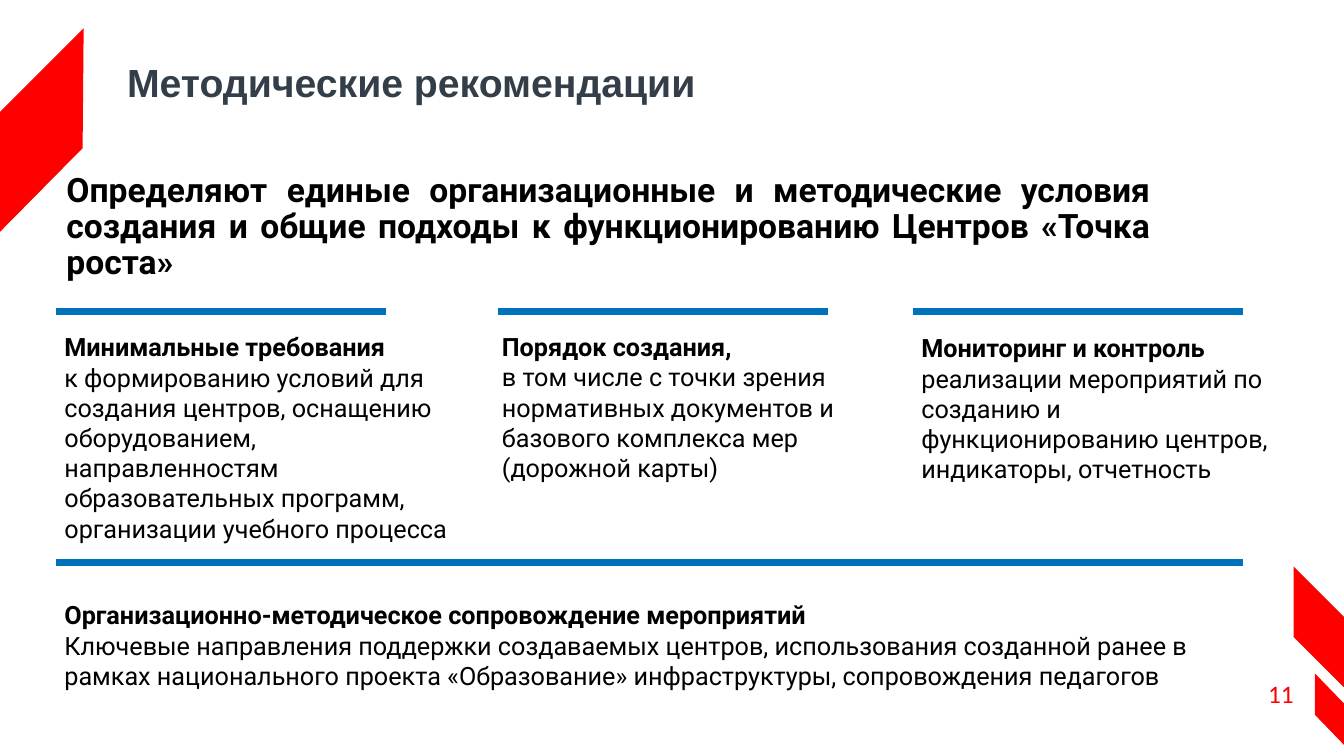
from dataclasses import dataclass

from lxml.etree import SubElement
from pptx import Presentation
from pptx.dml.color import RGBColor
from pptx.enum.shapes import MSO_CONNECTOR
from pptx.enum.text import MSO_ANCHOR, MSO_AUTO_SIZE, PP_ALIGN
from pptx.oxml.ns import qn
from pptx.slide import Slide
from pptx.text.text import TextFrame, _Paragraph as Paragraph
from pptx.util import Emu, Pt

PX = 9144
COLORS = {"red": "FF0000", "blue": "0072BC", "slate": "333E48", "black": "000000"}
LEFT, RIGHT = 56, 1233
COLUMN_RULE_Y, COLUMN_RULE_W = 309, 327
BOTTOM_RULE_Y = 558


@dataclass(frozen=True)
class Box:
    x: int
    y: int
    w: int
    h: int

    def emu(self) -> tuple[Emu, ...]:
        return tuple(Emu(v * PX) for v in (self.x, self.y, self.w, self.h))


@dataclass(frozen=True)
class Section:
    box: Box
    heading: str
    body: str


@dataclass(frozen=True)
class Rule:
    x1: int
    x2: int
    y: int


RIBBONS = [
    [(0, 230), (0, 111), (83, 28), (82, 147)],
    [(1333, 682), (1283, 632), (1283, 562), (1333, 612)],
    [(1333, 739), (1304, 709), (1304, 668), (1333, 698)],
]

SECTIONS = [
    Section(
        Box(54, 324, 422, 175),
        "Минимальные требования",
        "к формированию условий для создания центров, оснащению оборудованием, "
        "направленностям образовательных программ, организации учебного процесса",
    ),
    Section(
        Box(488, 324, 390, 153),
        "Порядок создания,",
        "в том числе с точки зрения нормативных документов и базового "
        "комплекса мер (дорожной карты)",
    ),
    Section(
        Box(904, 325, 390, 199),
        "Мониторинг и контроль",
        "реализации мероприятий по созданию и функционированию центров, "
        "индикаторы, отчетность",
    ),
    Section(
        Box(54, 590, 1179, 78),
        "Организационно-методическое сопровождение мероприятий",
        "Ключевые направления поддержки создаваемых центров, использования "
        "созданной ранее в рамках национального проекта «Образование» "
        "инфраструктуры, сопровождения педагогов",
    ),
]

RULES = [Rule(x, x + COLUMN_RULE_W, COLUMN_RULE_Y) for x in (LEFT, 494, 906)]
RULES.append(Rule(LEFT, RIGHT, BOTTOM_RULE_Y))


def rgb(name: str) -> RGBColor:
    return RGBColor.from_string(COLORS[name])


def add_run(p: Paragraph, text: str, size: int, font: str = "Roboto",
            color: str = "black", bold: bool = False) -> None:
    r = p.add_run()
    r.text = text
    r.font.size = Pt(size)
    r.font.name = font
    r.font.bold = bold
    r.font.color.rgb = rgb(color)


def set_insets(tf: TextFrame, px: int) -> None:
    tf.margin_left = tf.margin_right = tf.margin_top = tf.margin_bottom = Emu(px * PX)


def add_text_box(s: Slide, box: Box) -> TextFrame:
    tf = s.shapes.add_textbox(*box.emu()).text_frame
    tf.word_wrap = True
    return tf


def add_ribbon(s: Slide, points: list[tuple[int, int]]) -> None:
    builder = s.shapes.build_freeform(*points[0], scale=PX)
    builder.add_line_segments(points[1:], close=True)
    sp = builder.convert_to_shape()
    sp.shadow.inherit = False
    sp.fill.solid()
    sp.fill.fore_color.rgb = rgb("red")
    sp.line.fill.background()


def add_title(s: Slide) -> None:
    sp = s.shapes.title
    sp.left, sp.top, sp.width, sp.height = Box(121, 40, 873, 88).emu()
    tf = sp.text_frame
    tf.auto_size = MSO_AUTO_SIZE.NONE
    tf.vertical_anchor = MSO_ANCHOR.MIDDLE
    set_insets(tf, 5)
    p = tf.paragraphs[0]
    p.alignment = PP_ALIGN.LEFT
    p.line_spacing = 0.9
    add_run(p, "Методические рекомендации", 28, "Arial", "slate", True)


def add_summary(s: Slide) -> None:
    p = add_text_box(s, Box(56, 167, 1095, 175)).paragraphs[0]
    p.alignment = PP_ALIGN.JUSTIFY
    p.line_spacing = 0.9
    add_run(p, "Определяют единые организационные и методические условия создания "
               "и общие подходы к функционированию Центров «Точка роста»", 24, bold=True)


def add_section(s: Slide, section: Section) -> None:
    p = add_text_box(s, section.box).paragraphs[0]
    add_run(p, section.heading, 18, bold=True)
    p.add_line_break()
    add_run(p, section.body, 18)


def add_rule(s: Slide, rule: Rule) -> None:
    x1, x2, y = (Emu(v * PX) for v in (rule.x1, rule.x2, rule.y))
    line = s.shapes.add_connector(MSO_CONNECTOR.STRAIGHT, x1, y, x2, y)
    line.line.color.rgb = rgb("blue")
    line.line.width = Pt(4.5)
    SubElement(line._element.spPr, qn("a:effectLst"))


def add_page_number(s: Slide) -> None:
    tf = add_text_box(s, Box(1238, 668, 50, 40))
    set_insets(tf, 5)
    p = tf.paragraphs[0]
    p.alignment = PP_ALIGN.RIGHT
    add_run(p, "11", 18, "Calibri", "red")


def main() -> None:
    prs = Presentation()
    prs.slide_width, prs.slide_height = Emu(1333 * PX), Emu(750 * PX)
    s = prs.slides.add_slide(prs.slide_layouts[5])
    add_page_number(s)
    for points in RIBBONS:
        add_ribbon(s, points)
    add_title(s)
    add_summary(s)
    for section in SECTIONS:
        add_section(s, section)
    for rule in RULES:
        add_rule(s, rule)
    prs.save("out.pptx")


if __name__ == "__main__":
    main()
